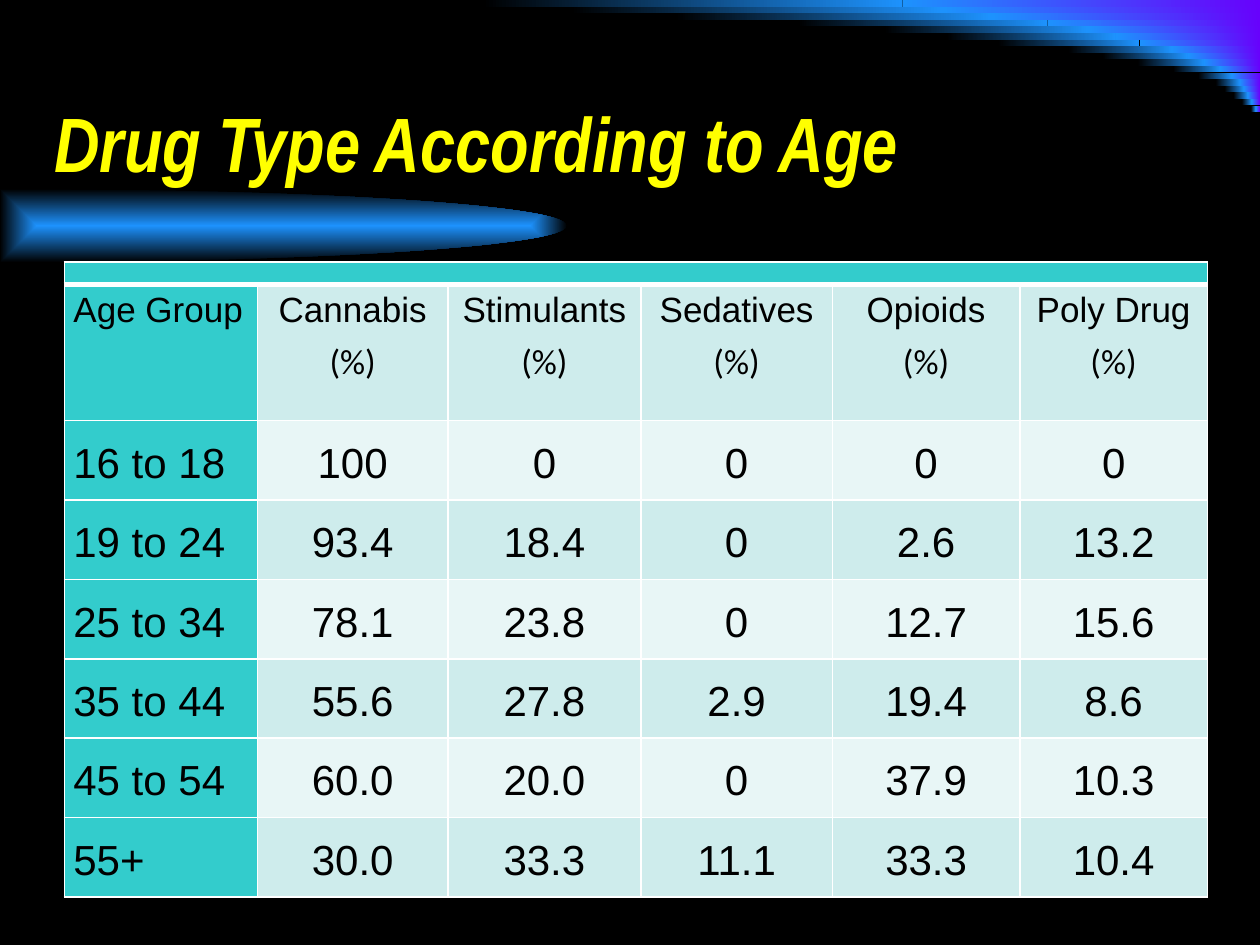
from math import cos, pi, sin

from lxml import etree
from pptx import Presentation
from pptx.dml.color import RGBColor
from pptx.enum.shapes import MSO_SHAPE
from pptx.enum.text import MSO_ANCHOR, PP_ALIGN
from pptx.oxml import parse_xml
from pptx.oxml.ns import nsdecls, qn
from pptx.util import Cm, Pt

RECTANGLE = MSO_SHAPE.RECTANGLE
MIDDLE, TOP = MSO_ANCHOR.MIDDLE, MSO_ANCHOR.TOP
CENTER, LEFT = PP_ALIGN.CENTER, PP_ALIGN.LEFT

COLORS = {
    "black": "000000",
    "blue": "1D92FD",
    "violet": "6702FC",
    "yellow": "FFFF00",
    "white": "FFFFFF",
    "teal": "33CCCC",
    "band": "CEECEC",
    "pale": "E8F6F6",
}


def rgb(name):
    return RGBColor.from_string(COLORS[name])


def paint_gradient(shape, start, end):
    shape.shadow.inherit = False
    shape.line.fill.background()
    shape.fill.gradient()
    shape.fill.gradient_angle = 0
    for stop, name, position in zip(shape.fill.gradient_stops, (start, end), (0, 1)):
        stop.color.rgb = rgb(name)
        stop.position = position


presentation = Presentation()
presentation.slide_width = Cm(25.4)
presentation.slide_height = Cm(19.05)
slide = presentation.slides.add_slide(presentation.slide_layouts[6])
slide.background.fill.solid()
slide.background.fill.fore_color.rgb = rgb("black")

stripe_lefts = [9.73, 11.51, 13.61, 16.08, 17.83, 19.08, 20.12, 21.54, 22.23,
                22.94, 23.65, 24.16, 24.51, 24.69, 24.87, 25.04, 25.22]
stripe_height = 2.26 / len(stripe_lefts)
for index, left in enumerate(stripe_lefts):
    middle = left + 0.54 * (25.4 - left)
    for start, end, colors in ((middle, 25.4, ("blue", "violet")),
                               (left, middle, ("black", "blue"))):
        stripe = slide.shapes.add_shape(
            RECTANGLE, Cm(start), Cm(index * stripe_height),
            Cm(end - start), Cm(stripe_height))
        paint_gradient(stripe, *colors)

arc_steps = 60
arc = [(Cm(11.43 * sin(pi * step / arc_steps)),
        Cm(4.55 - 0.74 * cos(pi * step / arc_steps)))
       for step in range(arc_steps + 1)]
builder = slide.shapes.build_freeform(*arc[0])
builder.add_line_segments(arc[1:], close=True)
half_ellipse = builder.convert_to_shape()
paint_gradient(half_ellipse, "blue", "black")
gradient = half_ellipse._element.spPr.find(qn("a:gradFill"))
gradient.remove(gradient.find(qn("a:lin")))
gradient.append(parse_xml(
    f'<a:path {nsdecls("a")} path="shape">'
    '<a:fillToRect l="50000" t="50000" r="50000" b="50000"/></a:path>'))

title = slide.shapes.add_textbox(Cm(0.84), Cm(1.27), Cm(21.59), Cm(3.18))
title.text_frame.word_wrap = True
title.text_frame.vertical_anchor = MIDDLE
paragraph = title.text_frame.paragraphs[0]
paragraph.text = "Drug Type According to Age"
paragraph.font.name = "Arial Narrow"
paragraph.font.size = Pt(44)
paragraph.font.bold = True
paragraph.font.italic = True
paragraph.font.color.rgb = rgb("yellow")

drugs = ["Cannabis", "Stimulants", "Sedatives", "Opioids", "Poly Drug"]
rows = [
    [""] * 6,
    ["Age Group"] + [f"{drug}\n(%)" for drug in drugs],
    ["16 to 18", "100", "0", "0", "0", "0"],
    ["19 to 24", "93.4", "18.4", "0", "2.6", "13.2"],
    ["25 to 34", "78.1", "23.8", "0", "12.7", "15.6"],
    ["35 to 44", "55.6", "27.8", "2.9", "19.4", "8.6"],
    ["45 to 54", "60.0", "20.0", "0", "37.9", "10.3"],
    ["55+", "30.0", "33.3", "11.1", "33.3", "10.4"],
]
column_widths = [3.89, 3.84, 3.89, 3.86, 3.78, 3.78]
row_heights = [0.46, 2.74] + [1.6] * 6

table = slide.shapes.add_table(
    len(rows), len(column_widths), Cm(1.3), Cm(5.28),
    Cm(sum(column_widths)), Cm(sum(row_heights))).table
table.first_row = False
table.horz_banding = False
for column, width in zip(table.columns, column_widths):
    column.width = Cm(width)
for row, height in zip(table.rows, row_heights):
    row.height = Cm(height)

for row_index, values in enumerate(rows):
    for column_index, value in enumerate(values):
        cell = table.cell(row_index, column_index)
        cell.margin_left = cell.margin_right = Cm(0.18)
        cell.margin_top = cell.margin_bottom = 0
        cell.vertical_anchor = MIDDLE if row_index > 1 else TOP
        properties = cell._tc.get_or_add_tcPr()
        for edge in ("lnL", "lnR", "lnT", "lnB"):
            weight = Pt(3) if row_index == 0 and edge == "lnB" else Pt(1)
            properties.append(parse_xml(
                f'<a:{edge} {nsdecls("a")} w="{weight}"><a:solidFill>'
                f'<a:srgbClr val="{COLORS["white"]}"/></a:solidFill></a:{edge}>'))
        cell.fill.solid()
        if row_index == 0 or column_index == 0:
            cell.fill.fore_color.rgb = rgb("teal")
        else:
            cell.fill.fore_color.rgb = rgb("band" if row_index % 2 else "pale")
        cell.text = value
        for paragraph in cell.text_frame.paragraphs:
            if not value:
                etree.SubElement(paragraph._p, qn("a:endParaRPr"), sz="600")
                continue
            paragraph.alignment = CENTER if column_index else LEFT
            paragraph.line_spacing = 1.15
            paragraph.space_after = Pt(3)
            paragraph.font.name = "Calibri" if paragraph.text == "(%)" else "Arial"
            paragraph.font.size = Pt(24 if row_index > 1 else 20)
            paragraph.font.color.rgb = rgb("black")
table.cell(0, 0).merge(table.cell(0, 5))

presentation.save("out.pptx")
